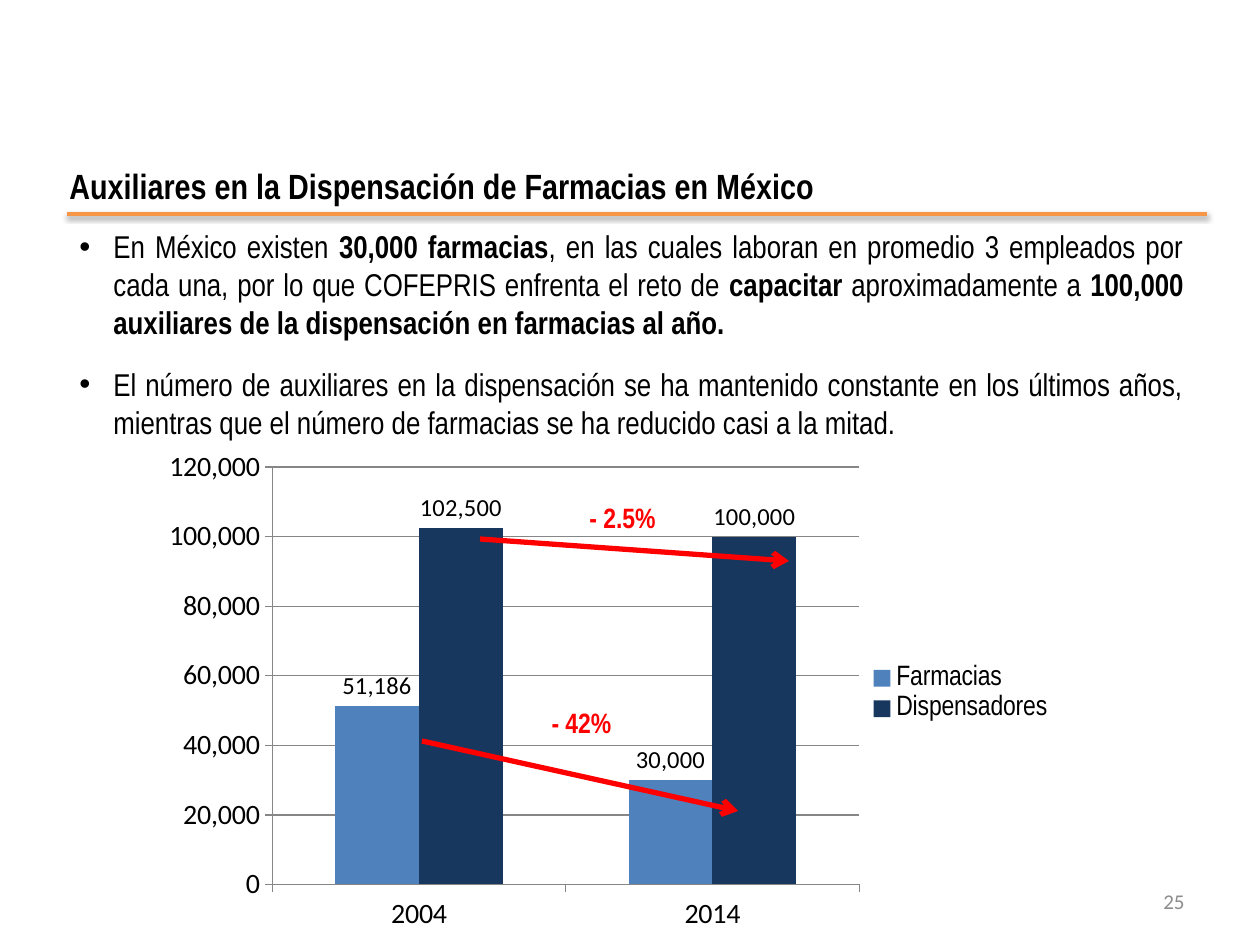
from lxml.etree import SubElement
from pptx import Presentation
from pptx.chart.data import CategoryChartData
from pptx.dml.color import RGBColor
from pptx.enum.chart import XL_CHART_TYPE, XL_LABEL_POSITION, XL_LEGEND_POSITION, XL_TICK_MARK
from pptx.enum.shapes import MSO_CONNECTOR
from pptx.enum.text import MSO_ANCHOR, PP_ALIGN
from pptx.oxml import parse_xml
from pptx.oxml.ns import nsdecls, qn
from pptx.util import Emu, Pt

SCALE = 914400 / 126
NARROW = "Arial Narrow"


def px(length):
    """Turn pixels into EMU."""
    return Emu(round(length * SCALE))


def color(hex_value):
    """Turn a hex string into a colour."""
    return RGBColor.from_string(hex_value)


class SlideBuilder:
    """Holds the style and the current slide."""

    black, red, grey, grid = "000000", "FF0000", "8C8C8C", "868686"
    text_format = {"name": NARROW, "size": 18, "bold": False, "color": black}
    callout_format = {"size": 16, "bold": True, "color": red}

    def __init__(self, presentation):
        """Add a blank slide."""
        self.slide = presentation.slides.add_slide(presentation.slide_layouts[6])

    def style(self, font, **changes):
        """Apply the text format with changes to a font."""
        for name, value in {**self.text_format, **changes}.items():
            if name == "color":
                font.color.rgb = color(value)
            else:
                setattr(font, name, Pt(value) if name == "size" else value)

    def text(self, box, paragraphs, align, anchor=MSO_ANCHOR.TOP, bullet=False, **changes):
        """Add a text box whose paragraphs are lists of (text, bold) runs."""
        frame = self.slide.shapes.add_textbox(*map(px, box)).text_frame
        frame.word_wrap = True
        frame.vertical_anchor = anchor
        for index, runs in enumerate(paragraphs):
            paragraph = frame.add_paragraph() if index else frame.paragraphs[0]
            paragraph.alignment = align
            if index:
                paragraph.space_before = Pt(14)
            if bullet:
                self.bullet(paragraph)
            for words, bold in runs:
                run = paragraph.add_run()
                run.text = words
                self.style(run.font, **{**changes, "bold": bold})

    def bullet(self, paragraph):
        """Give a paragraph a hanging round bullet."""
        properties = paragraph._p.get_or_add_pPr()
        properties.set("marL", str(px(34)))
        properties.set("indent", str(-px(34)))
        SubElement(properties, qn("a:buFont")).set("typeface", "Arial")
        SubElement(properties, qn("a:buChar")).set("char", "•")

    def line(self, start, end, hex_value, width, arrow=False, shadow=False):
        """Add a straight line, with an arrowhead or a soft shadow on request."""
        connector = self.slide.shapes.add_connector(
            MSO_CONNECTOR.STRAIGHT, *map(px, (*start, *end)))
        connector.line.color.rgb = color(hex_value)
        connector.line.width = Pt(width)
        if arrow:
            SubElement(connector.line._get_or_add_ln(), qn("a:tailEnd")).set("type", "arrow")
        effects = SubElement(connector._element.spPr, qn("a:effectLst"))
        if shadow:
            effects.append(parse_xml(
                f'<a:outerShdw {nsdecls("a")} blurRad="{Pt(3.1)}" dist="{Pt(1.6)}" '
                'dir="5400000" rotWithShape="0"><a:srgbClr val="000000">'
                '<a:alpha val="38000"/></a:srgbClr></a:outerShdw>'))

    def callout(self, box, words):
        """Add a centred red label."""
        self.text(box, [[(words, True)]], PP_ALIGN.CENTER, MSO_ANCHOR.MIDDLE,
                  **self.callout_format)

    def chart(self, box, categories, series, plot_area):
        """Add a clustered column chart from (name, values, colour) series."""
        data = CategoryChartData(number_format="#,##0")
        data.categories = categories
        for name, values, _ in series:
            data.add_series(name, values)
        chart = self.slide.shapes.add_chart(
            XL_CHART_TYPE.COLUMN_CLUSTERED, *map(px, box), data).chart
        chart.has_title = False
        self.style(chart.font, name="Calibri")
        chart.has_legend = True
        chart.legend.position = XL_LEGEND_POSITION.RIGHT
        chart.legend.include_in_layout = False
        self.style(chart.legend.font, size=16)
        for axis in (chart.category_axis, chart.value_axis):
            axis.major_tick_mark = XL_TICK_MARK.OUTSIDE
            axis.format.line.color.rgb = color(self.grid)
            self.style(axis.tick_labels.font, name="Calibri", size=16)
        value_axis = chart.value_axis
        value_axis.minimum_scale, value_axis.maximum_scale = 0, 120000
        value_axis.major_unit = 20000
        value_axis.major_gridlines.format.line.color.rgb = color(self.grid)
        value_axis.tick_labels.number_format = "#,##0"
        value_axis.tick_labels.number_format_is_linked = False
        plot = chart.plots[0]
        plot.gap_width, plot.overlap, plot.vary_by_categories = 150, 0, False
        for column, (_, _, hex_value) in zip(plot.series, series):
            column.format.fill.solid()
            column.format.fill.fore_color.rgb = color(hex_value)
            labels = column.data_labels
            labels.show_value = True
            labels.number_format = "#,##0"
            labels.number_format_is_linked = False
            labels.position = XL_LABEL_POSITION.OUTSIDE_END
            self.style(labels.font, name="Calibri", size=14)
        self.place_plot(chart, plot_area)

    def place_plot(self, chart, plot_area):
        """Fix the inner plot area as fractions of the chart."""
        area = chart._chartSpace.chart.plotArea
        for old in area.findall(qn("c:layout")):
            area.remove(old)
        settings = [("layoutTarget", "inner"), ("xMode", "edge"), ("yMode", "edge"),
                    *zip("xywh", plot_area)]
        entries = "".join(f'<c:{name} val="{value}"/>' for name, value in settings)
        area.insert(0, parse_xml(f'<c:layout {nsdecls("c")}><c:manualLayout>{entries}'
                                 '</c:manualLayout></c:layout>'))


def main():
    """Build and save the slide."""
    presentation = Presentation()
    presentation.slide_width, presentation.slide_height = px(1260), px(945)
    builder = SlideBuilder(presentation)
    builder.text((67, 221, 1129, 230), [
        [("En México existen ", False), ("30,000 farmacias", True),
         (", en las cuales laboran en promedio 3 empleados por cada una, "
          "por lo que COFEPRIS enfrenta el reto de ", False),
         ("capacitar", True), (" aproximadamente a ", False),
         ("100,000 auxiliares de la dispensación en farmacias al año.", True)],
        [("El número de auxiliares en la dispensación se ha mantenido constante en los "
          "últimos años, mientras que el número de farmacias se ha reducido casi a la "
          "mitad.", False)],
    ], PP_ALIGN.JUSTIFY, bullet=True)
    builder.line((67, 214), (1207, 214), "F79646", 2, shadow=True)
    builder.text((57, 158, 1170, 55),
                 [[("Auxiliares en la Dispensación de Farmacias en México", True)]],
                 PP_ALIGN.JUSTIFY, size=20)
    builder.text((903, 876, 294, 50), [[("25", False)]], PP_ALIGN.RIGHT,
                 MSO_ANCHOR.MIDDLE, name="Calibri", size=12, color=builder.grey)
    builder.chart((164, 442, 903, 503), ["2004", "2014"], [
        ("Farmacias", (51186, 30000), "4F81BD"),
        ("Dispensadores", (102500, 100000), "17375E"),
    ], (0.12, 0.05, 0.65, 0.83))
    for start, end, label_box, words in [
        ((422, 741), (738, 811), (512, 690, 139, 64), "- 42%"),
        ((480, 539), (789, 561), (553, 485, 139, 64), "- 2.5%"),
    ]:
        builder.line(start, end, builder.red, 3, arrow=True)
        builder.callout(label_box, words)
    presentation.save("out.pptx")


if __name__ == "__main__":
    main()
